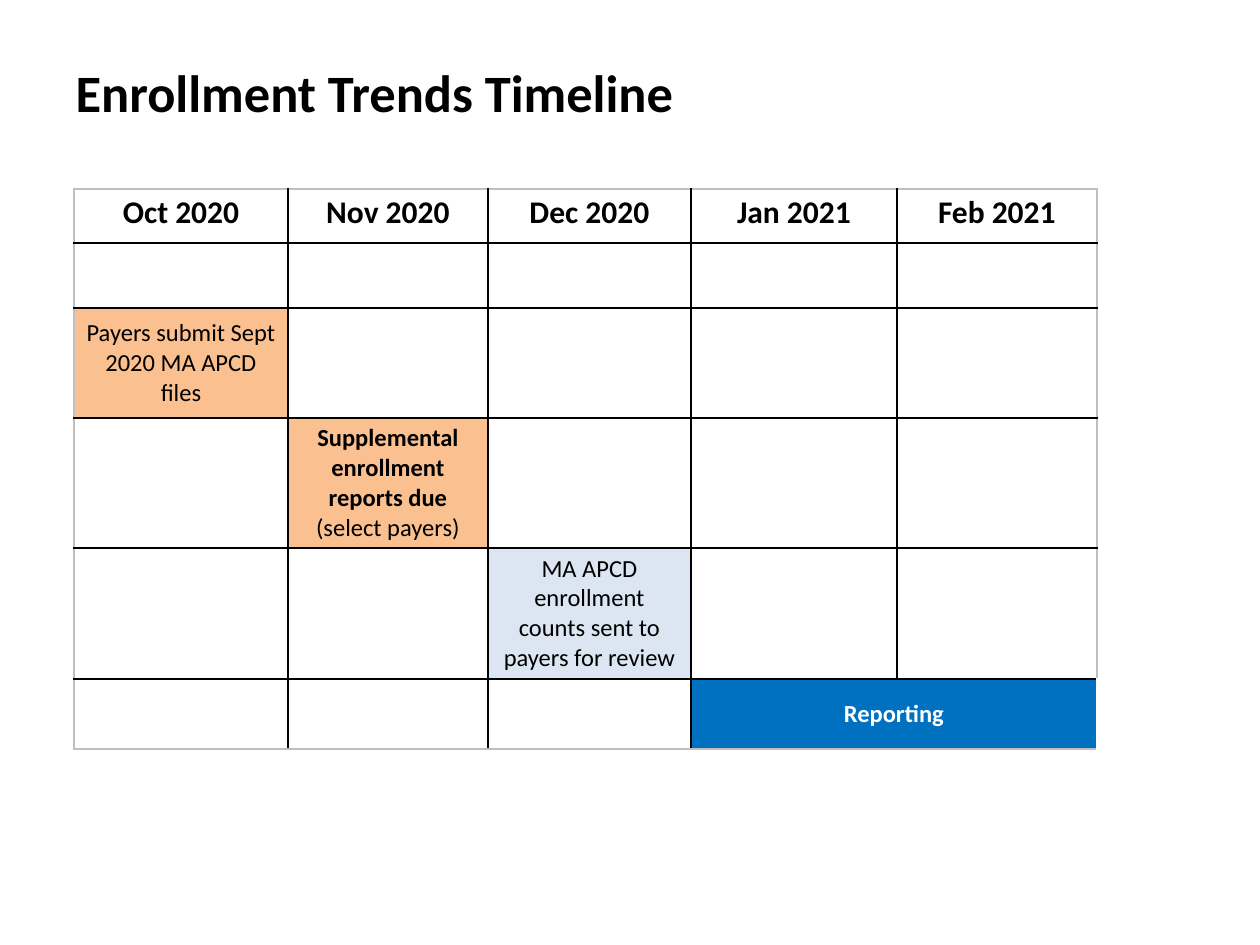
"""Build the enrollment trends timeline slide."""
from dataclasses import dataclass

from lxml.etree import SubElement
from pptx import Presentation
from pptx.dml.color import RGBColor
from pptx.enum.text import MSO_ANCHOR, MSO_AUTO_SIZE, PP_ALIGN
from pptx.oxml.ns import qn
from pptx.util import Emu, Pt


@dataclass(frozen=True)
class Theme:
    font: str = "Calibri"
    text: str = "000000"
    light_text: str = "FFFFFF"
    grid: str = "000000"
    frame: str = "BFBFBF"
    submission: str = "FAC090"
    review: str = "DCE6F2"
    reporting: str = "0070C0"
    title_size: int = 30
    month_size: int = 18
    task_size: int = 14
    line_width: int = 1


@dataclass(frozen=True)
class Run:
    text: str
    bold: bool = False


@dataclass(frozen=True)
class Task:
    row: int
    col: int
    runs: tuple[Run, ...]
    fill: str
    color: str
    months: int = 1


THEME = Theme()
PX_PER_INCH = 126
MONTHS = ("Oct 2020", "Nov 2020", "Dec 2020", "Jan 2021", "Feb 2021")
COL_WIDTHS = (214, 200, 203, 206, 200)
ROW_HEIGHTS = (54, 65, 110, 130, 131, 70)
TASKS = (
    Task(2, 0, (Run("Payers submit Sept 2020 MA APCD files"),),
         THEME.submission, THEME.text),
    Task(3, 1, (Run("Supplemental enrollment reports due ", True), Run("(select payers)")),
         THEME.submission, THEME.text),
    Task(4, 2, (Run("MA APCD enrollment counts sent to payers for review"),),
         THEME.review, THEME.text),
    Task(5, 3, (Run("Reporting", True),), THEME.reporting, THEME.light_text, months=2),
)


def px(n: int) -> Emu:
    """Turn pixels into EMU."""
    return Emu(round(n * 914400 / PX_PER_INCH))


def set_attrs(obj, values: dict) -> None:
    """Set each named value on an object."""
    for name, value in values.items():
        setattr(obj, name, value)


def write(p, runs: tuple[Run, ...], size: int, color: str) -> None:
    """Add formatted runs to a paragraph."""
    for run in runs:
        r = p.add_run()
        r.text = run.text
        set_attrs(r.font, {"name": THEME.font, "size": Pt(size), "bold": run.bold})
        r.font.color.rgb = RGBColor.from_string(color)


def set_borders(cell, colors: dict[str, str]) -> None:
    """Draw solid borders on the named sides of a cell."""
    tc_pr = cell._tc.get_or_add_tcPr()
    for side, color in colors.items():
        ln = SubElement(tc_pr, qn(f"a:ln{side}"), w=str(Pt(THEME.line_width)))
        SubElement(SubElement(ln, qn("a:solidFill")), qn("a:srgbClr"), val=color)


def add_title(s, text: str) -> None:
    """Place and format the title placeholder."""
    sp = s.shapes.title
    set_attrs(sp, {"left": px(63), "top": px(53), "width": px(1071), "height": px(77)})
    tf = sp.text_frame
    set_attrs(tf, {"word_wrap": True, "auto_size": MSO_AUTO_SIZE.NONE,
                   "vertical_anchor": MSO_ANCHOR.MIDDLE})
    p = tf.paragraphs[0]
    p.alignment = PP_ALIGN.LEFT
    write(p, (Run(text, True),), THEME.title_size, THEME.text)


def add_grid(s):
    """Add the empty table with its dark grid and light frame."""
    rows, cols = len(ROW_HEIGHTS), len(COL_WIDTHS)
    table = s.shapes.add_table(rows, cols, px(74), px(189),
                               px(sum(COL_WIDTHS)), px(sum(ROW_HEIGHTS))).table
    set_attrs(table, {"first_row": False, "horz_banding": False})
    for column, width in zip(table.columns, COL_WIDTHS):
        column.width = px(width)
    for row, height in zip(table.rows, ROW_HEIGHTS):
        row.height = px(height)
    for i in range(rows):
        for j in range(cols):
            cell = table.cell(i, j)
            edges = {"L": j == 0, "R": j == cols - 1, "T": i == 0, "B": i == rows - 1}
            colors = {side: THEME.frame if outer else THEME.grid
                      for side, outer in edges.items()}
            for task in TASKS:
                if i == task.row and task.col <= j < task.col + task.months:
                    if j > task.col:
                        del colors["L"]
                    if j < task.col + task.months - 1:
                        del colors["R"]
            set_borders(cell, colors)
            cell.fill.background()
            set_attrs(cell, {"margin_left": px(12), "margin_right": px(12),
                             "margin_top": px(5), "margin_bottom": px(5)})
    return table


def fill_cell(cell, runs: tuple[Run, ...], size: int, color: str) -> None:
    """Write centred text in a cell."""
    p = cell.text_frame.paragraphs[0]
    p.alignment = PP_ALIGN.CENTER
    write(p, runs, size, color)


def add_task(table, task: Task) -> None:
    """Mark a task in the months that it takes."""
    cell = table.cell(task.row, task.col)
    if task.months > 1:
        cell.merge(table.cell(task.row, task.col + task.months - 1))
    cell.fill.solid()
    cell.fill.fore_color.rgb = RGBColor.from_string(task.fill)
    cell.vertical_anchor = MSO_ANCHOR.MIDDLE
    fill_cell(cell, task.runs, THEME.task_size, task.color)


def main() -> None:
    """Build and save the slide."""
    prs = Presentation()
    set_attrs(prs, {"slide_width": px(1260), "slide_height": px(945)})
    s = prs.slides.add_slide(prs.slide_layouts[5])
    add_title(s, "Enrollment Trends Timeline")
    table = add_grid(s)
    for j, month in enumerate(MONTHS):
        fill_cell(table.cell(0, j), (Run(month, True),), THEME.month_size, THEME.text)
    for task in TASKS:
        add_task(table, task)
    prs.save("out.pptx")


if __name__ == "__main__":
    main()
